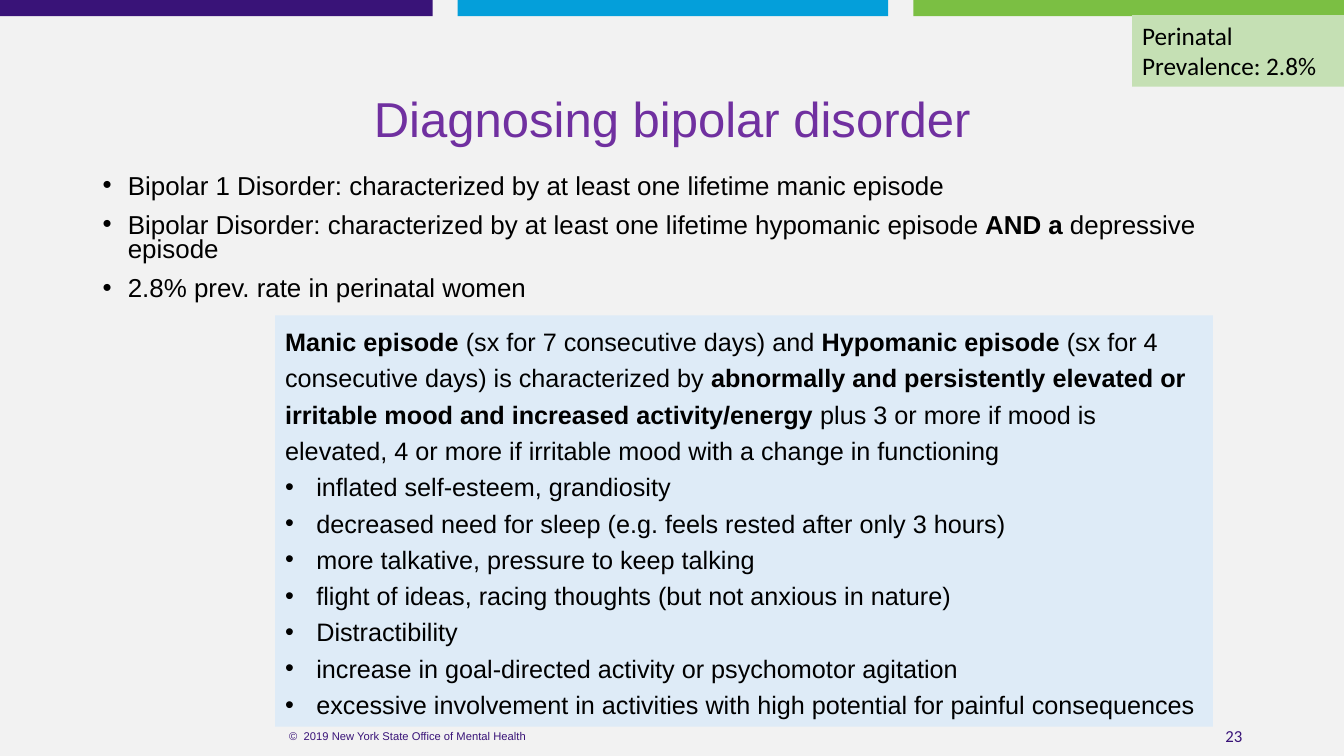
import pptx
import pptx.util
import pptx.dml.color
import pptx.enum.shapes
import pptx.enum.text
import pptx.oxml.ns
from lxml import etree

Inches = pptx.util.Inches
Pt = pptx.util.Pt
RGBColor = pptx.dml.color.RGBColor
Align = pptx.enum.text.PP_ALIGN
Anchor = pptx.enum.text.MSO_ANCHOR

BLACK = RGBColor(0x00, 0x00, 0x00)
PALE_GREY = RGBColor(0xF2, 0xF2, 0xF2)
INDIGO = RGBColor(0x39, 0x13, 0x78)
BLUE = RGBColor(0x04, 0x9F, 0xDA)
GREEN = RGBColor(0x7B, 0xBF, 0x43)
PURPLE = RGBColor(0x70, 0x30, 0xA0)
PALE_BLUE = RGBColor(0xDE, 0xEB, 0xF7)
PALE_GREEN = RGBColor(0xC5, 0xE0, 0xB4)

DISORDERS = [
    "Bipolar 1 Disorder: characterized by at least one lifetime manic episode",
    "Bipolar Disorder: characterized by at least one lifetime hypomanic episode **AND a** depressive episode",
    "2.8% prev. rate in perinatal women",
]
EPISODE = (
    "**Manic episode **(sx for 7 consecutive days) and **Hypomanic episode **"
    "(sx for 4 consecutive days) is characterized by "
    "**abnormally and persistently elevated or irritable mood and increased activity/energy**"
    " plus 3 or more if mood is elevated, 4 or more if irritable mood with a change in functioning"
)
SYMPTOMS = [
    "inflated self-esteem, grandiosity",
    "decreased need for sleep (e.g. feels rested after only 3 hours)",
    "more talkative, pressure to keep talking",
    "flight of ideas, racing thoughts (but not anxious in nature)",
    "Distractibility",
    "increase in goal-directed activity or psychomotor agitation",
    "excessive involvement in activities with high potential for painful consequences",
]


class SlideBuilder:
    """Adds styled panels, text boxes and paragraphs to one slide."""

    def __init__(self, page, font="Arial", color=BLACK):
        self.page = page
        self.font = font
        self.color = color

    def panel(self, left, top, width, height, fill):
        shape = self.page.shapes.add_shape(
            pptx.enum.shapes.MSO_SHAPE.RECTANGLE,
            Inches(left), Inches(top), Inches(width), Inches(height))
        shape.shadow.inherit = False
        shape.fill.solid()
        shape.fill.fore_color.rgb = fill
        shape.line.fill.background()
        shape.text_frame.word_wrap = True
        shape.text_frame.vertical_anchor = Anchor.TOP
        return shape

    def text_box(self, left, top, width, height, anchor=Anchor.MIDDLE):
        box = self.page.shapes.add_textbox(
            Inches(left), Inches(top), Inches(width), Inches(height))
        box.text_frame.word_wrap = True
        box.text_frame.vertical_anchor = anchor
        return box

    def add_lines(self, box, lines, size, align=Align.LEFT, spacing=1.0,
                  before=0, indent=0, font=None, color=None):
        frame = box.text_frame
        for line in lines:
            first = not frame.text
            para = frame.paragraphs[0] if first else frame.add_paragraph()
            para.alignment = align
            para.line_spacing = spacing
            para.space_before = Pt(0 if first else before)
            if indent:
                self.bullet(para, indent)
            for index, piece in enumerate(line.split("**")):
                if piece:
                    span = para.add_run()
                    span.text = piece
                    span.font.size = Pt(size)
                    span.font.name = font or self.font
                    span.font.bold = index % 2 == 1
                    span.font.color.rgb = color or self.color

    def bullet(self, para, indent):
        properties = para._p.get_or_add_pPr()
        properties.set("marL", str(Inches(indent)))
        properties.set("indent", str(-Inches(indent)))
        qn = pptx.oxml.ns.qn
        etree.SubElement(properties, qn("a:buFont")).set("typeface", "Arial")
        etree.SubElement(properties, qn("a:buChar")).set("char", "•")


def main():
    deck = pptx.Presentation()
    deck.slide_width = Inches(13.33)
    deck.slide_height = Inches(7.5)
    page = deck.slides.add_slide(deck.slide_layouts[6])
    page.background.fill.solid()
    page.background.fill.fore_color.rgb = PALE_GREY
    builder = SlideBuilder(page)

    for left, width, fill in [(0, 4.29, INDIGO), (4.54, 4.27, BLUE), (9.06, 4.27, GREEN)]:
        builder.panel(left, 0, width, 0.16, fill)

    page_number = builder.text_box(9.42, 7.1, 3, 0.4)
    builder.add_lines(page_number, ["23"], 12, Align.RIGHT, font="Calibri", color=INDIGO)
    copyright_line = builder.text_box(1.81, 7.1, 4.47, 0.4)
    builder.add_lines(copyright_line, ["©  2019 New York State Office of Mental Health"],
                      8, Align.CENTER, color=INDIGO)

    title = builder.text_box(0.92, 0.82, 11.5, 0.78)
    builder.add_lines(title, ["Diagnosing bipolar disorder"], 35, Align.CENTER, 0.9, color=PURPLE)
    disorders = builder.text_box(0.92, 1.69, 11.5, 1.44, Anchor.TOP)
    builder.add_lines(disorders, DISORDERS, 18.5, spacing=0.8, before=10, indent=0.25)

    criteria = builder.panel(2.73, 3.13, 9.3, 4.08, PALE_BLUE)
    builder.add_lines(criteria, [EPISODE], 18, spacing=1.2)
    builder.add_lines(criteria, SYMPTOMS, 18, spacing=1.2, indent=0.31)

    prevalence = builder.panel(11.23, 0.15, 2.1, 0.71, PALE_GREEN)
    builder.add_lines(prevalence, ["Perinatal Prevalence: 2.8%"], 18, font="Calibri")

    deck.save("out.pptx")


if __name__ == "__main__":
    main()
